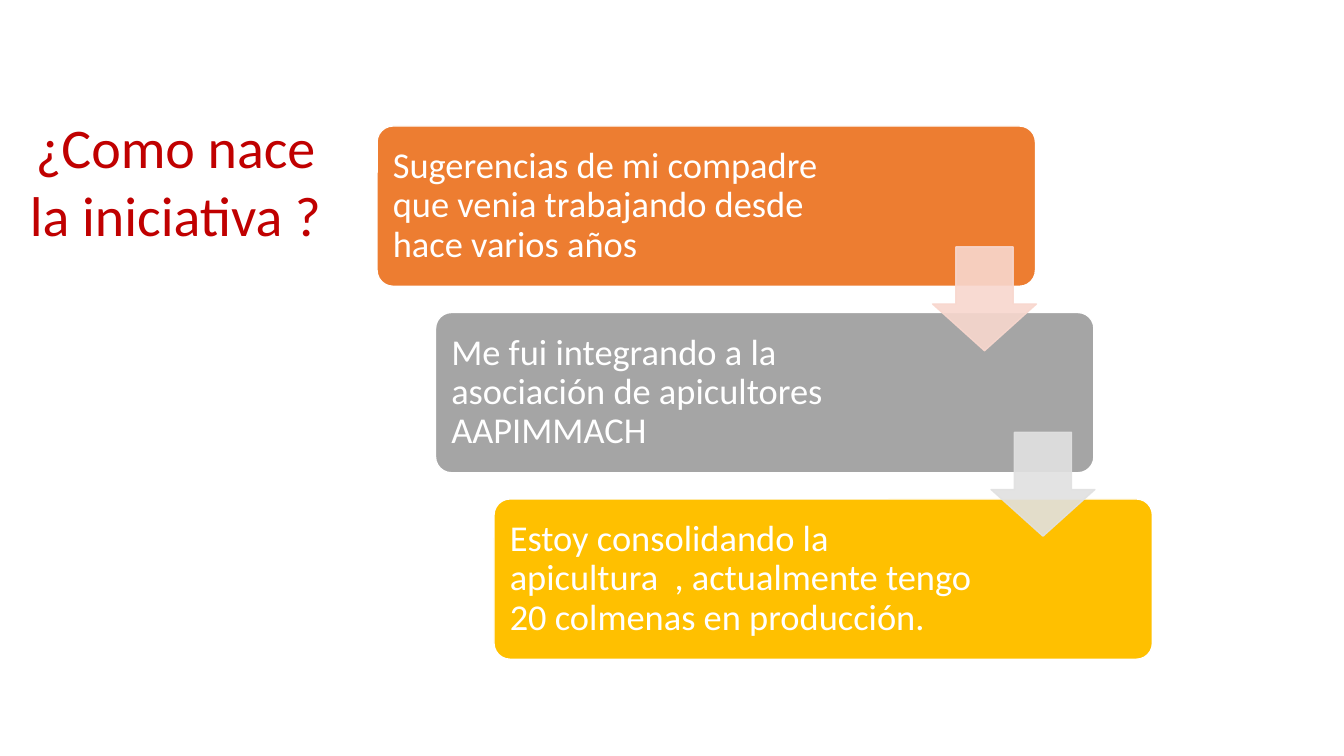
"""Build a slide with a title and three descending steps joined by arrows."""
import pptx
import pptx.util
import pptx.dml.color
import pptx.enum.shapes
import pptx.enum.text
from lxml import etree
from pptx.oxml.ns import qn

Inches = pptx.util.Inches
Shape = pptx.enum.shapes.MSO_SHAPE
Anchor = pptx.enum.text.MSO_ANCHOR
Align = pptx.enum.text.PP_ALIGN

TITLE = "¿Como nace la iniciativa ?"
STEPS = [
    ("Sugerencias de mi compadre que venia trabajando desde hace varios años", "ED7D31"),
    ("Me fui integrando a la asociación de apicultores AAPIMMACH", "A5A5A5"),
    ("Estoy consolidando la apicultura  , actualmente tengo 20 colmenas en producción.", "FFC000"),
]
ARROW_COLORS = ["F8D7CE", "E1E1E1"]
STEP_LEFT, STEP_TOP, STEP_WIDTH, STEP_HEIGHT = 3.74, 1.25, 6.53, 1.59
STEP_RIGHT_SHIFT, STEP_DOWN_SHIFT = 0.58, 1.85
ARROW_LEFT, ARROW_TOP, ARROW_SIZE = 9.25, 2.45, 1.03
ARROW_DOWN_SHIFT = 1.84
ARROW_OPACITY = 90


def color(value):
    return pptx.dml.color.RGBColor.from_string(value)


def apply(target, values):
    for name, value in values.items():
        setattr(target, name, value)


def write(shape, text, size, text_color, frame_format, para_format):
    frame = shape.text_frame
    frame.text = text
    apply(frame, {"word_wrap": True, **frame_format})
    para = frame.paragraphs[0]
    apply(para, para_format)
    span = para.runs[0]
    apply(span.font, {"name": "Calibri", "size": pptx.util.Pt(size)})
    span.font.color.rgb = color(text_color)


def add_block(page, kind, place, adjustments, fill, line):
    shape = page.shapes.add_shape(kind, *map(Inches, place))
    for index, value in enumerate(adjustments):
        shape.adjustments[index] = value
    shape.shadow.inherit = False
    shape.fill.solid()
    shape.fill.fore_color.rgb = color(fill)
    shape.line.color.rgb = color(line)
    shape.line.width = pptx.util.Pt(1)
    return shape


def add_title(page):
    title = page.shapes.title
    apply(title, {"left": Inches(0.18), "top": Inches(1.07),
                  "width": Inches(3.12), "height": Inches(1.45)})
    write(title, TITLE, 40, "C00000",
          {"vertical_anchor": Anchor.TOP,
           "auto_size": pptx.enum.text.MSO_AUTO_SIZE.SHAPE_TO_FIT_TEXT},
          {"alignment": Align.CENTER})


def add_steps(page):
    margins = {"margin_left": Inches(0.11), "margin_right": Inches(1.72),
               "margin_top": Inches(0.11), "margin_bottom": Inches(0.11),
               "vertical_anchor": Anchor.MIDDLE}
    for index, (text, fill) in enumerate(STEPS):
        place = (STEP_LEFT + index * STEP_RIGHT_SHIFT,
                 STEP_TOP + index * STEP_DOWN_SHIFT, STEP_WIDTH, STEP_HEIGHT)
        step = add_block(page, Shape.ROUNDED_RECTANGLE, place, [0.1], fill, "FFFFFF")
        write(step, text, 26, "FFFFFF", margins,
              {"alignment": Align.LEFT, "line_spacing": 0.9})


def add_arrows(page):
    for index, fill in enumerate(ARROW_COLORS):
        place = (ARROW_LEFT + index * STEP_RIGHT_SHIFT,
                 ARROW_TOP + index * ARROW_DOWN_SHIFT, ARROW_SIZE, ARROW_SIZE)
        arrow = add_block(page, Shape.DOWN_ARROW, place, [0.45, 0.55], fill, fill)
        arrow.adjustments[0], arrow.adjustments[1] = 0.55, 0.45
        for tint in arrow.fill._xPr.iter(qn("a:srgbClr")):
            etree.SubElement(tint, qn("a:alpha"), val=str(ARROW_OPACITY * 1000))


def main():
    deck = pptx.Presentation()
    apply(deck, {"slide_width": Inches(13.33), "slide_height": Inches(7.5)})
    page = deck.slides.add_slide(deck.slide_layouts[5])
    add_title(page)
    add_steps(page)
    add_arrows(page)
    deck.save("out.pptx")


if __name__ == "__main__":
    main()
